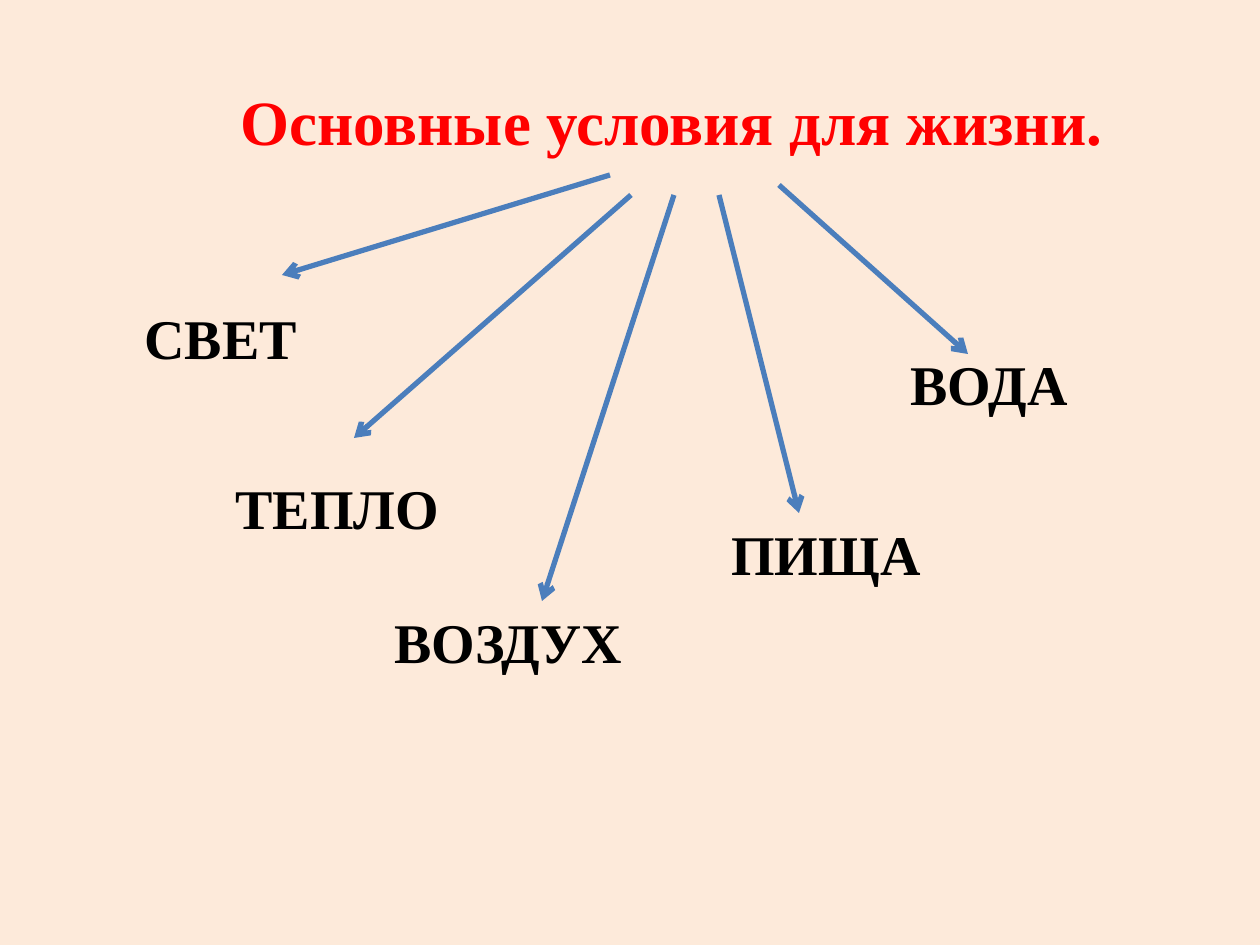
from dataclasses import dataclass

from lxml import etree
from pptx import Presentation
from pptx.dml.color import RGBColor
from pptx.enum.shapes import MSO_CONNECTOR
from pptx.enum.text import MSO_ANCHOR, MSO_AUTO_SIZE, PP_ALIGN
from pptx.oxml.ns import qn
from pptx.util import Inches, Pt

STRAIGHT = MSO_CONNECTOR.STRAIGHT
TOP = MSO_ANCHOR.TOP
LEFT = PP_ALIGN.LEFT
FIT = MSO_AUTO_SIZE.SHAPE_TO_FIT_TEXT
TITLE_ONLY = 5
DPI = 126


@dataclass(frozen=True)
class Theme:
    font: str = "Times New Roman"
    back: str = "FDEADA"
    title: str = "FF0000"
    label: str = "000000"
    arrow: str = "4B7EBC"
    title_size: int = 36
    label_size: int = 32
    arrow_width: int = 3


THEME = Theme()
TITLE = ("Основные условия для жизни.", (228, 76, 893, 89))
LABEL_H = 81
# word, (left, top, width) of its label, arrow start, arrow end
NEEDS = [
    ("СВЕТ", (132, 297, 205), (610, 175), (282, 275)),
    ("ТЕПЛО", (223, 467, 257), (631, 195), (354, 438)),
    ("ВОЗДУХ", (382, 601, 268), (674, 195), (542, 601)),
    ("ВОДА", (898, 343, 218), (779, 185), (968, 354)),
    ("ПИЩА", (719, 513, 218), (719, 195), (799, 513)),
]


def px(*nums):
    return [Inches(n / DPI) for n in nums]


def write(shape, text, size, color):
    frame = shape.text_frame
    frame.word_wrap = True
    frame.auto_size = FIT
    frame.vertical_anchor = TOP
    para = frame.paragraphs[0]
    para.alignment = LEFT
    run = para.add_run()
    run.text = text
    font = run.font
    font.name, font.size, font.bold = THEME.font, Pt(size), True
    font.color.rgb = RGBColor.from_string(color)


def add_arrow(slide, start, end):
    link = slide.shapes.add_connector(STRAIGHT, *px(*start, *end))
    link.line.color.rgb = RGBColor.from_string(THEME.arrow)
    link.line.width = Pt(THEME.arrow_width)
    etree.SubElement(link.line._get_or_add_ln(), qn("a:tailEnd"), type="arrow")
    etree.SubElement(link._element.spPr, qn("a:effectLst"))


def main():
    deck = Presentation()
    deck.slide_width, deck.slide_height = Inches(10), Inches(7.5)
    slide = deck.slides.add_slide(deck.slide_layouts[TITLE_ONLY])
    fill = slide.background.fill
    fill.solid()
    fill.fore_color.rgb = RGBColor.from_string(THEME.back)

    text, box = TITLE
    title = slide.shapes.title
    title.left, title.top, title.width, title.height = px(*box)
    write(title, text, THEME.title_size, THEME.title)

    for word, place, _, _ in NEEDS:
        label = slide.shapes.add_textbox(*px(*place, LABEL_H))
        write(label, word, THEME.label_size, THEME.label)
    for _, _, start, end in NEEDS:
        add_arrow(slide, start, end)

    deck.save("out.pptx")


if __name__ == "__main__":
    main()
